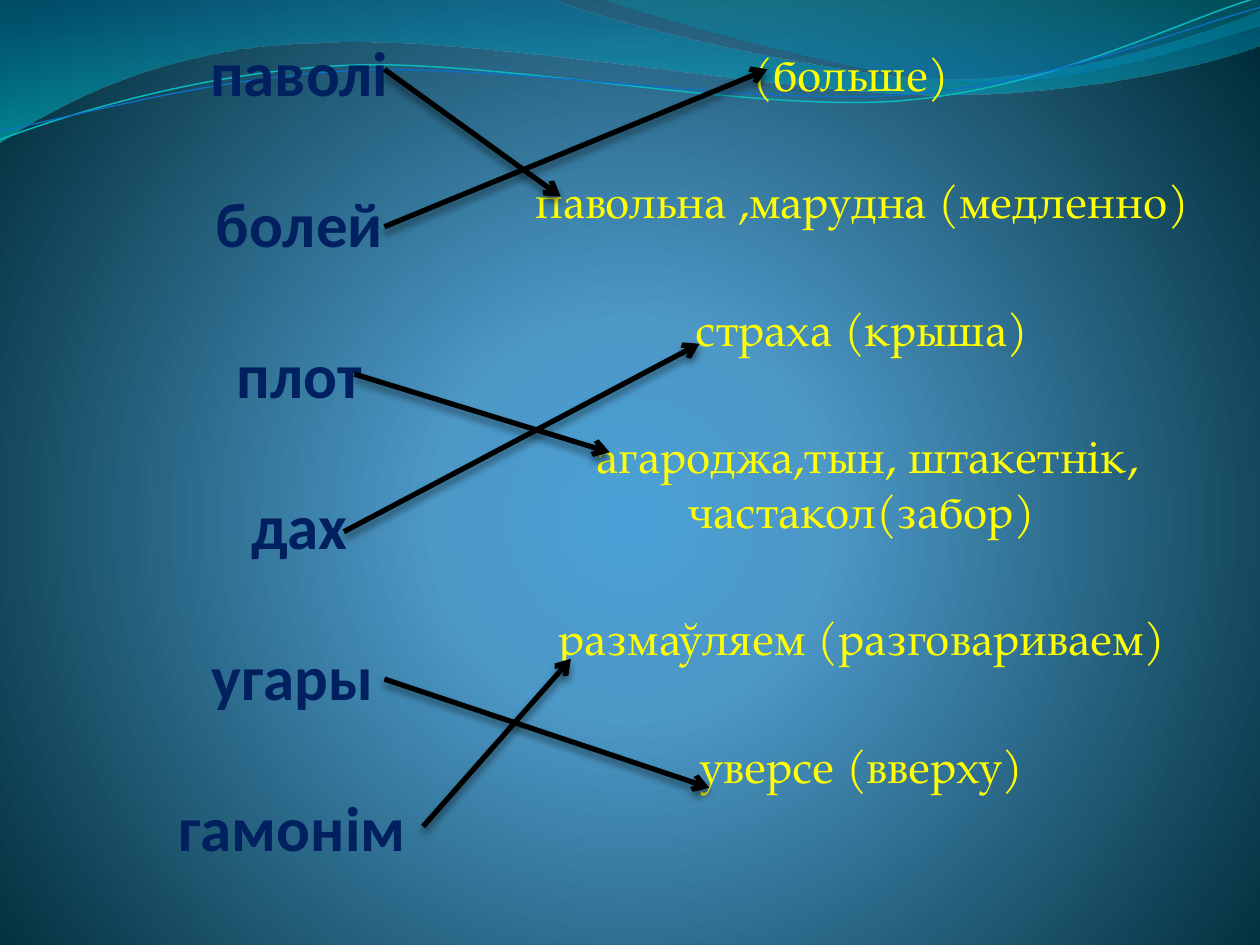
from lxml import etree
from pptx import Presentation
from pptx.dml.color import RGBColor
from pptx.enum.shapes import MSO_CONNECTOR
from pptx.enum.text import MSO_ANCHOR, MSO_AUTO_SIZE, PP_ALIGN
from pptx.oxml import parse_xml
from pptx.oxml.ns import nsdecls, qn
from pptx.util import Cm, Pt

STRAIGHT = MSO_CONNECTOR.STRAIGHT
TOP = MSO_ANCHOR.TOP
BOTTOM = MSO_ANCHOR.BOTTOM
NO_AUTOFIT = MSO_AUTO_SIZE.NONE
CENTER = PP_ALIGN.CENTER

RIBBON_TILT = -2.7
LINEAR_DOWN = '<a:lin ang="5400000" scaled="0"/>'
RADIAL = ('<a:path path="circle">'
          '<a:fillToRect l="10000" t="110000" r="10000" b="100000"/></a:path>')

WORDS = ["паволі", "болей", "плот", "дах", "угары ", "гамонім "]
MEANINGS = ["(больше)  ", "павольна ,марудна (медленно)", "страха (крыша)",
            " агароджа,тын, штакетнік, частакол(забор)",
            "размаўляем (разговариваем)", "уверсе (вверху)"]
MATCHES = [((7.75, 1.4), (11.3, 3.96)), ((7.75, 4.57), (15.47, 1.4)),
           ((7.14, 7.54), (12.29, 9.12)), ((6.93, 10.72), (14.1, 6.93)),
           ((7.75, 13.69), (14.3, 15.88)), ((8.53, 16.66), (11.51, 13.28))]

WIDE_WAVE = [[(0, 0)], [(11.18, 0)],
             [(12.09, 0.43), (16.87, 1.6), (19.25, 1.6)],
             [(21.67, 1.6), (24.33, 0.66), (25.4, 0.23)], [(25.4, 0.91)],
             [(24.97, 1.12), (22.1, 1.93), (18.95, 1.91)],
             [(15.8, 1.91), (9.7, 0.71), (6.53, 0.86)],
             [(3.28, 0.91), (1.17, 2.11), (0, 2.87)]]
RIGHT_WAVE = [[(12.17, 0)],
              [(12.93, 0.28), (17.32, 1.57), (19.53, 1.65)],
              [(21.74, 1.75), (24.41, 0.81), (25.4, 0.53)], [(25.4, 0)]]
TEAL_RIBBON = [[(-0.06, 2.22)],
               [(1.18, 1.82), (4.01, 1.04), (7.05, 1.05)],
               [(10.04, 1.07), (15.02, 2.37), (18.08, 2.29)],
               [(21.14, 2.2), (23.88, 0.91), (25.42, 0.55)]]
BLUE_RIBBON = [[(-0.05, 2.04)],
               [(1.15, 1.9), (4.17, 1.15), (7.19, 1.16)],
               [(10.25, 1.18), (15.13, 2.25), (18.19, 2.17)],
               [(21.22, 2.1), (23.95, 1.06), (25.46, 0.75)]]


def rgb(color):
    """Turn a hex string into a colour."""
    return RGBColor.from_string(color)


def set_gradient(fill, properties, stops, direction):
    """Fill with (position, colour, opacity) stops, all in percent."""
    fill.solid()
    stop_xml = "".join(
        f'<a:gs pos="{position * 1000}"><a:srgbClr val="{color}">'
        f'<a:alpha val="{opacity * 1000}"/></a:srgbClr></a:gs>'
        for position, color, opacity in stops)
    gradient = parse_xml(f'<a:gradFill {nsdecls("a")} rotWithShape="1">'
                         f'<a:gsLst>{stop_xml}</a:gsLst>{direction}</a:gradFill>')
    properties.replace(properties.find(qn("a:solidFill")), gradient)


def add_outline(slide, segments, close):
    """Draw a freeform whose three-point segments are cubic curves."""
    start, *rest = [(Cm(x), Cm(y)) for segment in segments for x, y in segment]
    builder = slide.shapes.build_freeform(*start)
    builder.add_line_segments(rest, close=close)
    outline = builder.convert_to_shape()
    outline.shadow.inherit = False
    steps = iter(list(outline.element.iter(qn("a:lnTo"))))
    for segment in segments[1:]:
        group = [next(steps) for _ in segment]
        if len(group) == 3:
            group[0].tag = qn("a:cubicBezTo")
            for step in group[1:]:
                group[0].append(step[0])
                step.getparent().remove(step)
    return outline


def add_wave(slide, segments, stops):
    """Add a translucent wave."""
    wave = add_outline(slide, segments, True)
    set_gradient(wave.fill, wave.element.spPr, stops, LINEAR_DOWN)
    wave.line.fill.background()


def add_ribbon(slide, segments, color, width):
    """Add a thin, slightly tilted curved line."""
    ribbon = add_outline(slide, segments, False)
    ribbon.rotation = RIBBON_TILT
    ribbon.fill.background()
    ribbon.line.color.rgb = rgb(color)
    ribbon.line.width = Pt(width)


def fill_column(column, lines, font, size, color, bold, gap):
    """Write centred lines with an even gap between them."""
    frame = column.text_frame
    frame.word_wrap = True
    frame.auto_size = NO_AUTOFIT
    frame.margin_left = 0
    frame.margin_right = Cm(0.05)
    frame.text = "\n".join(lines)
    for paragraph in frame.paragraphs:
        paragraph.alignment = CENTER
        paragraph.space_before = Pt(0)
        paragraph.space_after = Pt(gap)
        for run in paragraph.runs:
            run.font.name = font
            run.font.size = Pt(size)
            run.font.bold = bold
            run.font.color.rgb = rgb(color)
    frame.paragraphs[-1].space_after = Pt(0)


def anchor_column(column, anchor, top, bottom):
    """Set the anchor and the vertical margins of a column."""
    frame = column.text_frame
    frame.vertical_anchor = anchor
    frame.margin_top, frame.margin_bottom = Cm(top), Cm(bottom)


def add_arrow(slide, start, end):
    """Add a black arrow with a soft shadow."""
    arrow = slide.shapes.add_connector(STRAIGHT, *map(Cm, start + end))
    arrow.line.color.rgb = rgb("000000")
    arrow.line.width = Pt(3)
    line = arrow.element.spPr.find(qn("a:ln"))
    etree.SubElement(line, qn("a:tailEnd"), type="arrow")
    arrow.element.spPr.append(parse_xml(
        f'<a:effectLst {nsdecls("a")}>'
        '<a:outerShdw blurRad="57150" dist="38100" dir="5400000" rotWithShape="0">'
        '<a:srgbClr val="000000"><a:alpha val="48000"/></a:srgbClr>'
        '</a:outerShdw></a:effectLst>'))


def main():
    """Build the word matching slide."""
    deck = Presentation()
    deck.slide_width, deck.slide_height = Cm(25.4), Cm(19.05)
    slide = deck.slides.add_slide(deck.slide_layouts[5])
    set_gradient(slide.background.fill, slide.element.cSld.bg.bgPr,
                 [(0, "4AA0D6", 100), (25, "4C98C7", 100), (100, "002C38", 100)], RADIAL)

    add_wave(slide, WIDE_WAVE, [(0, "0074A1", 45), (100, "00C6CF", 55)])
    add_wave(slide, RIGHT_WAVE, [(0, "00A1A9", 30), (80, "008BBF", 45)])
    add_ribbon(slide, TEAL_RIBBON, "0AB8BF", 0.85)
    add_ribbon(slide, BLUE_RIBBON, "0F6FC6", 0.75)

    words = slide.shapes.title
    words.left, words.top, words.width, words.height = map(Cm, (1.4, 4.37, 9.32, 16.08))
    fill_column(words, WORDS, "Calibri", 36, "002060", True, 43.1)
    anchor_column(words, BOTTOM, 0, 3.02)
    slide.shapes.element.append(words.element)

    meanings = slide.shapes.add_textbox(*map(Cm, (9.47, 0.79, 15.87, 15.88)))
    fill_column(meanings, MEANINGS, "TeX Gyre Pagella", 26, "FFFF00", False, 41.6)
    anchor_column(meanings, TOP, 0.14, 0.13)

    for start, end in MATCHES:
        add_arrow(slide, start, end)
    deck.save("out.pptx")


if __name__ == "__main__":
    main()
